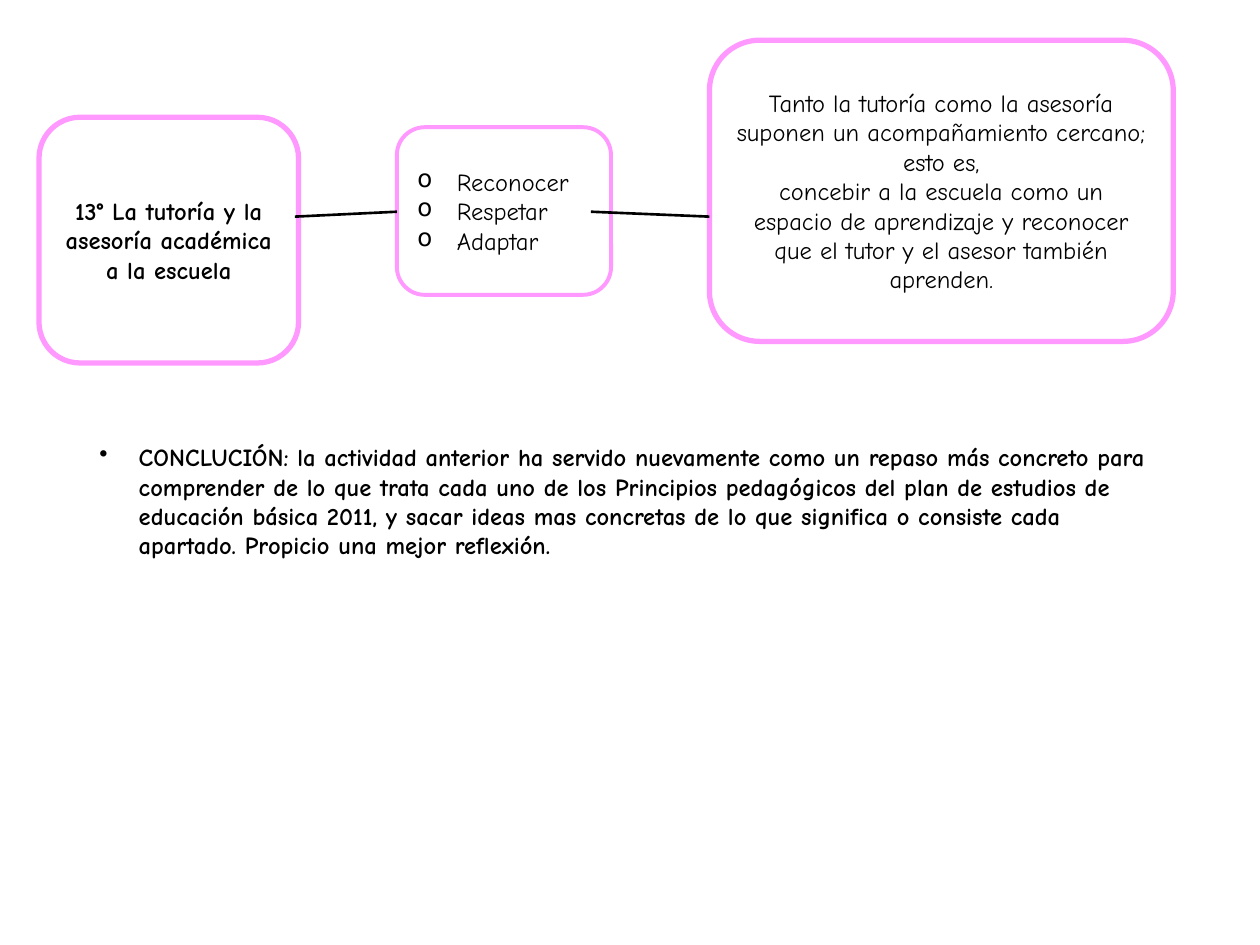
from dataclasses import dataclass

from lxml.etree import SubElement
from pptx import Presentation
from pptx.dml.color import RGBColor
from pptx.enum.shapes import MSO_CONNECTOR, MSO_SHAPE
from pptx.enum.text import MSO_ANCHOR, PP_ALIGN
from pptx.oxml.ns import qn
from pptx.util import Pt


@dataclass(frozen=True)
class Theme:
    font: str = "Comic Neue"
    size: float = 14
    indent: float = 22.5
    connector_width: float = 1.5
    ink: RGBColor = RGBColor(0, 0, 0)
    paper: RGBColor = RGBColor(255, 255, 255)
    pink: RGBColor = RGBColor(0xFF, 0x99, 0xFF)


@dataclass(frozen=True)
class Card:
    box: tuple[float, float, float, float]
    border: float
    lines: tuple[str, ...]
    bold: bool = False
    bullet: str = ""


@dataclass(frozen=True)
class Link:
    start: tuple[float, float]
    end: tuple[float, float]


THEME = Theme()

CARDS = (
    Card((22.3, 67, 148.3, 140.4), 3,
         ("13° La tutoría y la asesoría académica a la escuela",), bold=True),
    Card((226.8, 72.7, 122.4, 95.8), 2.25,
         ("Reconocer", "Respetar", "Adaptar"), bullet="o"),
    Card((405.4, 23, 265, 172.1), 3,
         ("Tanto la tutoría como la asesoría suponen un acompañamiento cercano; esto es,",
          "concebir a la escuela como un espacio de aprendizaje y reconocer que el tutor "
          "y el asesor también aprenden.")),
)

LINKS = (
    Link((168.5, 123.8), (226.8, 121)),
    Link((337.7, 121), (405.4, 123.8)),
)

CONCLUSION = (
    "CONCLUCIÓN: la actividad anterior ha servido nuevamente como un repaso más concreto "
    "para comprender de lo que trata cada uno de los Principios pedagógicos del plan de "
    "estudios de educación básica 2011, y sacar ideas mas concretas de lo que significa o "
    "consiste cada apartado. Propicio una mejor reflexión."
)


def write(tf, lines: tuple[str, ...], *, bold: bool = False, bullet: str = "",
          align=PP_ALIGN.LEFT, anchor=MSO_ANCHOR.TOP) -> None:
    tf.word_wrap = True
    tf.vertical_anchor = anchor
    for i, line in enumerate(lines):
        p = tf.add_paragraph() if i else tf.paragraphs[0]
        p.alignment = align
        if bullet:
            pPr = p._p.get_or_add_pPr()
            pPr.set("marL", str(Pt(THEME.indent)))
            pPr.set("indent", str(-Pt(THEME.indent)))
            SubElement(pPr, qn("a:buChar"), char=bullet)
        r = p.add_run()
        r.text = line
        r.font.name = THEME.font
        r.font.size = Pt(THEME.size)
        r.font.bold = bold
        r.font.color.rgb = THEME.ink


def draw_card(s, card: Card) -> None:
    sp = s.shapes.add_shape(MSO_SHAPE.ROUNDED_RECTANGLE, *map(Pt, card.box))
    sp.shadow.inherit = False
    sp.fill.solid()
    sp.fill.fore_color.rgb = THEME.paper
    sp.line.color.rgb = THEME.pink
    sp.line.width = Pt(card.border)
    write(sp.text_frame, card.lines, bold=card.bold, bullet=card.bullet,
          align=PP_ALIGN.LEFT if card.bullet else PP_ALIGN.CENTER,
          anchor=MSO_ANCHOR.MIDDLE)


def draw_link(s, link: Link) -> None:
    cx = s.shapes.add_connector(MSO_CONNECTOR.STRAIGHT, *map(Pt, link.start + link.end))
    cx.line.color.rgb = THEME.ink
    cx.line.width = Pt(THEME.connector_width)
    SubElement(cx._element.spPr, qn("a:effectLst"))


def main() -> None:
    prs = Presentation()
    prs.slide_width, prs.slide_height = Pt(720), Pt(540)
    s = prs.slides.add_slide(prs.slide_layouts[6])

    conclusion = s.shapes.add_textbox(Pt(49.7), Pt(249.1), Pt(620.6), Pt(92.2))
    write(conclusion.text_frame, (CONCLUSION,), bold=True, bullet="•")
    for card in CARDS:
        draw_card(s, card)
    for link in LINKS:
        draw_link(s, link)

    prs.save("out.pptx")


if __name__ == "__main__":
    main()
